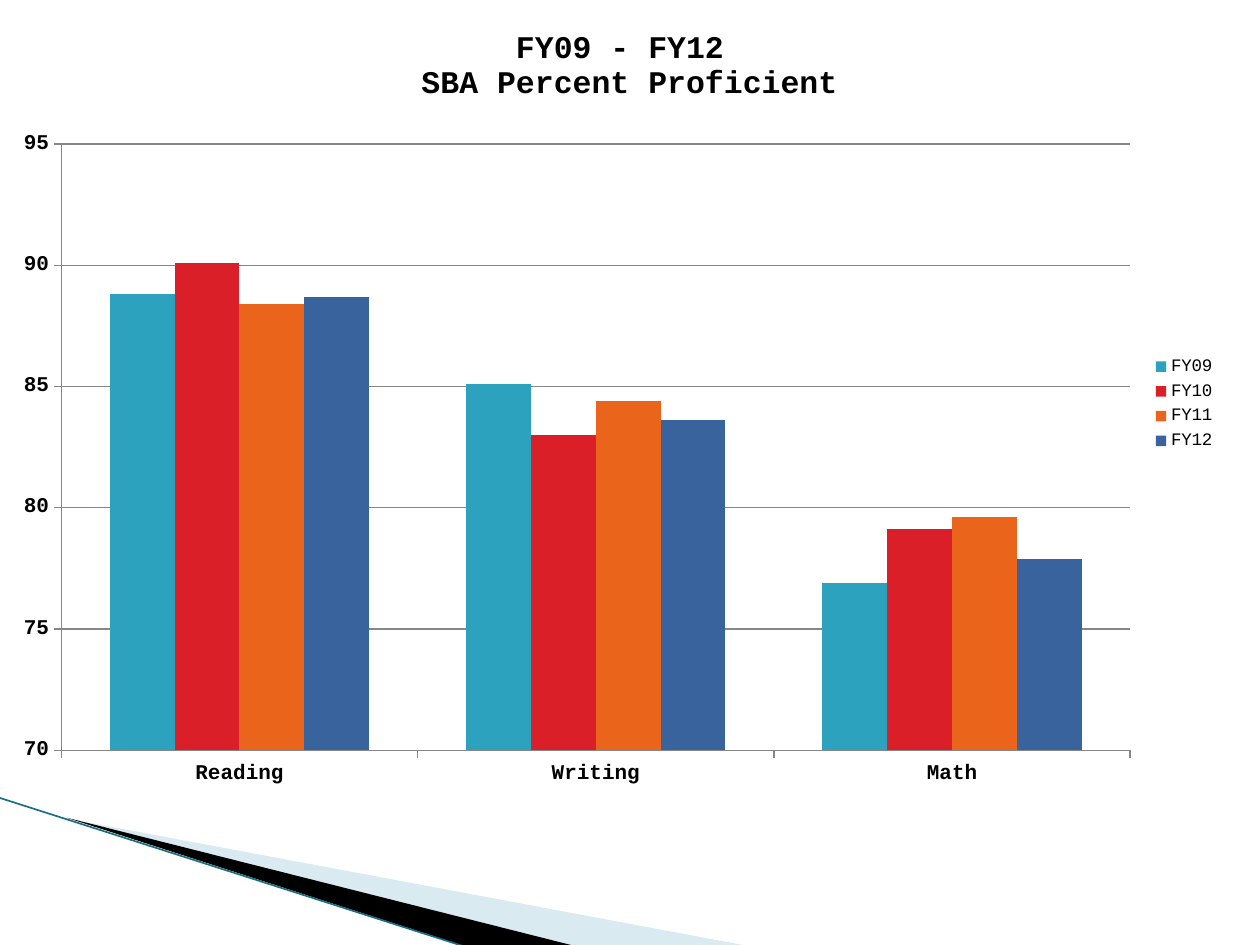
"""Build a slide with a clustered column chart of proficiency by subject and year."""
from lxml.etree import SubElement
from pptx import Presentation
from pptx.chart.data import CategoryChartData
from pptx.dml.color import RGBColor
from pptx.enum.chart import XL_CHART_TYPE as ChartType, XL_LEGEND_POSITION as LegendPos
from pptx.enum.chart import XL_TICK_MARK as Tick
from pptx.enum.shapes import MSO_CONNECTOR as Connector
from pptx.enum.text import PP_ALIGN as Align
from pptx.oxml import parse_xml
from pptx.oxml.ns import nsdecls, qn
from pptx.util import Inches, Pt

BLACK = RGBColor(0x00, 0x00, 0x00)
GREY = RGBColor(0x87, 0x87, 0x87)
PALE = RGBColor(0xA0, 0xCB, 0xDC)
DARK_TEAL = RGBColor(0x1B, 0x6F, 0x84)
TEAL = RGBColor(0x2D, 0xA2, 0xBF)
RED = RGBColor(0xDA, 0x1F, 0x28)
ORANGE = RGBColor(0xEB, 0x64, 0x1B)
BLUE = RGBColor(0x39, 0x63, 0x9D)
FONT = "Courier New"

TITLE = ["FY09 - FY12 ", "SBA Percent Proficient"]
SUBJECTS = ["Reading", "Writing", "Math"]
YEARS = [
    ("FY09", TEAL, (88.8, 85.1, 76.9)),
    ("FY10", RED, (90.1, 83.0, 79.1)),
    ("FY11", ORANGE, (88.4, 84.4, 79.6)),
    ("FY12", BLUE, (88.7, 83.6, 77.9)),
]
WEDGES = [
    (PALE, 40, [(0.55, 6.5), (5.95, 7.51), (4.56, 7.51)]),
    (BLACK, 100, [(0.53, 6.49), (4.57, 7.51), (3.72, 7.52)]),
]
EDGE = (-0.01, 6.33, 3.71, 7.52)
CHART_BOX = (0, 0.08, 9.75, 6.25)
TITLE_SPOT = {"x": 0.34, "y": 0.02}
PLOT_SPOT = {"x": 0.05, "y": 0.17, "w": 0.87, "h": 0.77}


def style(font, size=10, bold=False, color=BLACK):
    font.name, font.size, font.bold = FONT, Pt(size), bold
    font.color.rgb = color


def add_text(tf, lines, align=Align.CENTER, **fmt):
    for i, line in enumerate(lines):
        p = tf.add_paragraph() if i else tf.paragraphs[0]
        p.alignment = align
        r = p.add_run()
        r.text = line
        style(r.font, **fmt)


def place(parent, index, spot, inner=False):
    for old in parent.findall(qn("c:layout")):
        parent.remove(old)
    layout = parse_xml(f"<c:layout {nsdecls('c')}><c:manualLayout/></c:layout>")
    target = '<c:layoutTarget val="inner"/>' if inner else ""
    modes = "".join(f'<c:{k}Mode val="edge"/>' for k in "xy")
    sizes = "".join(f'<c:{k} val="{v}"/>' for k, v in spot.items())
    layout = parse_xml(f"<c:layout {nsdecls('c')}><c:manualLayout>{target}{modes}{sizes}"
                       "</c:manualLayout></c:layout>")
    parent.insert(index, layout)


def add_wedge(shapes, color, alpha, points):
    pts = [(Inches(x), Inches(y)) for x, y in points]
    fb = shapes.build_freeform(*pts[0])
    fb.add_line_segments(pts[1:])
    sp = fb.convert_to_shape()
    sp.shadow.inherit = False
    sp.line.fill.background()
    sp.fill.solid()
    sp.fill.fore_color.rgb = color
    if alpha < 100:
        clr = sp.fill._xPr.find(".//" + qn("a:srgbClr"))
        SubElement(clr, qn("a:alpha")).set("val", str(alpha * 1000))


def add_edge(shapes):
    cx = shapes.add_connector(Connector.STRAIGHT, *map(Inches, EDGE))
    cx.line.color.rgb = DARK_TEAL
    cx.line.width = Pt(0.95)
    SubElement(cx._element.spPr, qn("a:effectLst"))


def add_columns(shapes):
    data = CategoryChartData(number_format="0.0")
    data.categories = SUBJECTS
    for name, _, values in YEARS:
        data.add_series(name, values)
    chart = shapes.add_chart(ChartType.COLUMN_CLUSTERED, *map(Inches, CHART_BOX), data).chart
    style(chart.font)
    chart.has_title = True
    add_text(chart.chart_title.text_frame, TITLE, size=18, bold=True)
    chart.chart_title.include_in_layout = False
    place(chart.chart_title._element, 1, TITLE_SPOT)
    place(chart._chartSpace.chart.plotArea, 0, PLOT_SPOT, inner=True)

    chart.has_legend = True
    chart.legend.position = LegendPos.RIGHT
    chart.legend.include_in_layout = False
    style(chart.legend.font)

    plot = chart.plots[0]
    plot.gap_width, plot.overlap, plot.vary_by_categories = 150, 0, False
    for s, (_, color, _) in zip(plot.series, YEARS):
        s.format.fill.solid()
        s.format.fill.fore_color.rgb = color

    val = chart.value_axis
    val.minimum_scale, val.maximum_scale, val.major_unit = 70, 95, 5
    val.tick_labels.number_format = "0"
    val.tick_labels.number_format_is_linked = False
    val.major_gridlines.format.line.color.rgb = GREY
    for axis in (val, chart.category_axis):
        axis.major_tick_mark = Tick.OUTSIDE
        axis.format.line.color.rgb = GREY
        style(axis.tick_labels.font, size=12, bold=True)


def main():
    prs = Presentation()
    prs.slide_width, prs.slide_height = Inches(10), Inches(7.5)
    shapes = prs.slides.add_slide(prs.slide_layouts[6]).shapes
    for wedge in WEDGES:
        add_wedge(shapes, *wedge)
    add_edge(shapes)
    add_columns(shapes)
    prs.save("out.pptx")


if __name__ == "__main__":
    main()
